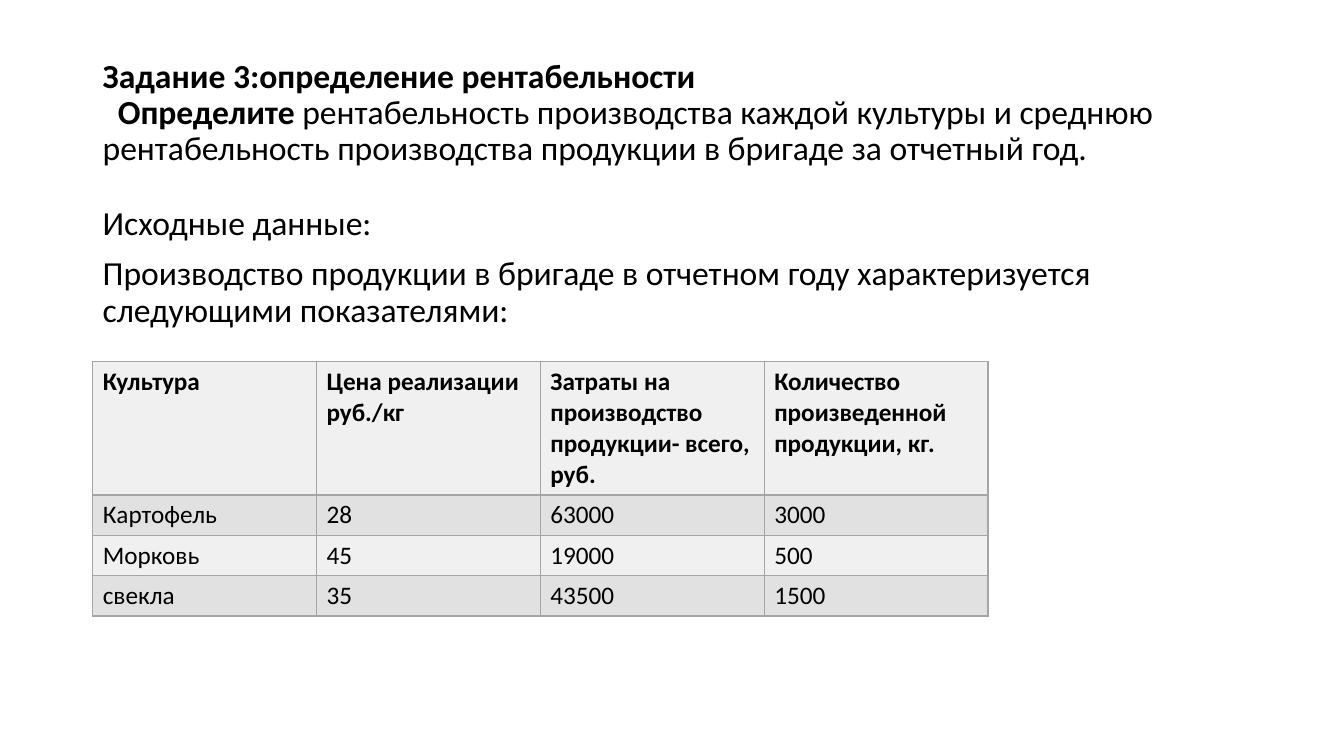
from dataclasses import dataclass

import pptx
import pptx.dml.color
import pptx.enum.text
import pptx.oxml
import pptx.oxml.ns
import pptx.util
from pptx.util import Inches

COLORS = {"text": "000000", "border": "A5A5A5", "light": "F0F0F0", "dark": "E1E1E1"}
FONT = "Calibri"


@dataclass
class Span:
    text: str
    bold: bool = False


@dataclass
class Para:
    spans: list[Span]
    before: float = 0
    indent: float = 0


@dataclass
class TextBlock:
    top: float
    height: float
    anchor: pptx.enum.text.MSO_ANCHOR
    paras: list[Para]


BLOCKS = [
    TextBlock(0.4, 1.45, pptx.enum.text.MSO_ANCHOR.MIDDLE, [
        Para([Span("Задание 3:определение рентабельности", True)]),
        Para([Span("Определите ", True),
              Span("рентабельность производства каждой культуры и среднюю "
                   "рентабельность производства продукции в бригаде за отчетный год.")],
             indent=0.15),
    ]),
    TextBlock(2, 4.76, pptx.enum.text.MSO_ANCHOR.TOP, [
        Para([Span("Исходные данные:")]),
        Para([Span("Производство продукции в бригаде в отчетном году "
                   "характеризуется следующими показателями:")], before=10),
    ]),
]

ROWS = [
    ["Культура", "Цена реализации руб./кг",
     "Затраты на производство продукции- всего, руб.",
     "Количество произведенной продукции, кг."],
    ["Картофель", "28", "63000", "3000"],
    ["Морковь", "45", "19000", "500"],
    ["свекла", "35", "43500", "1500"],
]
LEFT, COL_W, HEADER_H, ROW_H = 0.92, 2.22, 1.32, 0.4


def rgb(name: str) -> pptx.dml.color.RGBColor:
    return pptx.dml.color.RGBColor.from_string(COLORS[name])


def set_font(p, size: float) -> None:
    p.font.name = FONT
    p.font.size = pptx.util.Pt(size)
    p.font.color.rgb = rgb("text")


def add_text(s, block: TextBlock) -> None:
    sp = s.shapes.add_textbox(Inches(LEFT), Inches(block.top),
                              Inches(11.5), Inches(block.height))
    tf = sp.text_frame
    tf.word_wrap = True
    tf.vertical_anchor = block.anchor
    for i, para in enumerate(block.paras):
        p = tf.add_paragraph() if i else tf.paragraphs[0]
        p.line_spacing = 0.9
        p.space_before = pptx.util.Pt(para.before)
        if para.indent:
            p._p.get_or_add_pPr().set("indent", str(Inches(para.indent)))
        set_font(p, 24)
        for span in para.spans:
            r = p.add_run()
            r.text = span.text
            r.font.bold = span.bold


def add_borders(cell) -> None:
    for side in ("L", "R", "T", "B"):
        cell._tc.get_or_add_tcPr().append(pptx.oxml.parse_xml(
            f'<a:ln{side} {pptx.oxml.ns.nsdecls("a")} w="{pptx.util.Pt(1)}"><a:solidFill>'
            f'<a:srgbClr val="{COLORS["border"]}"/></a:solidFill></a:ln{side}>'))


def add_crop_table(s, rows: list[list[str]]) -> None:
    n_rows, n_cols = len(rows), len(rows[0])
    table = s.shapes.add_table(
        n_rows, n_cols, Inches(LEFT), Inches(3.59), Inches(COL_W * n_cols),
        Inches(HEADER_H + ROW_H * (n_rows - 1))).table
    table.first_row = table.horz_banding = False
    for column in table.columns:
        column.width = Inches(COL_W)
    for i, values in enumerate(rows):
        table.rows[i].height = Inches(ROW_H if i else HEADER_H)
        for j, value in enumerate(values):
            cell = table.cell(i, j)
            add_borders(cell)
            cell.fill.solid()
            cell.fill.fore_color.rgb = rgb("dark" if i % 2 else "light")
            p = cell.text_frame.paragraphs[0]
            set_font(p, 18)
            p.font.bold = i == 0
            p.add_run().text = value


def main() -> None:
    prs = pptx.Presentation()
    prs.slide_width, prs.slide_height = Inches(13.33), Inches(7.5)
    s = prs.slides.add_slide(prs.slide_layouts[6])
    # Task and introduction
    for block in BLOCKS:
        add_text(s, block)
    # Source data
    add_crop_table(s, ROWS)
    prs.save("out.pptx")


if __name__ == "__main__":
    main()
